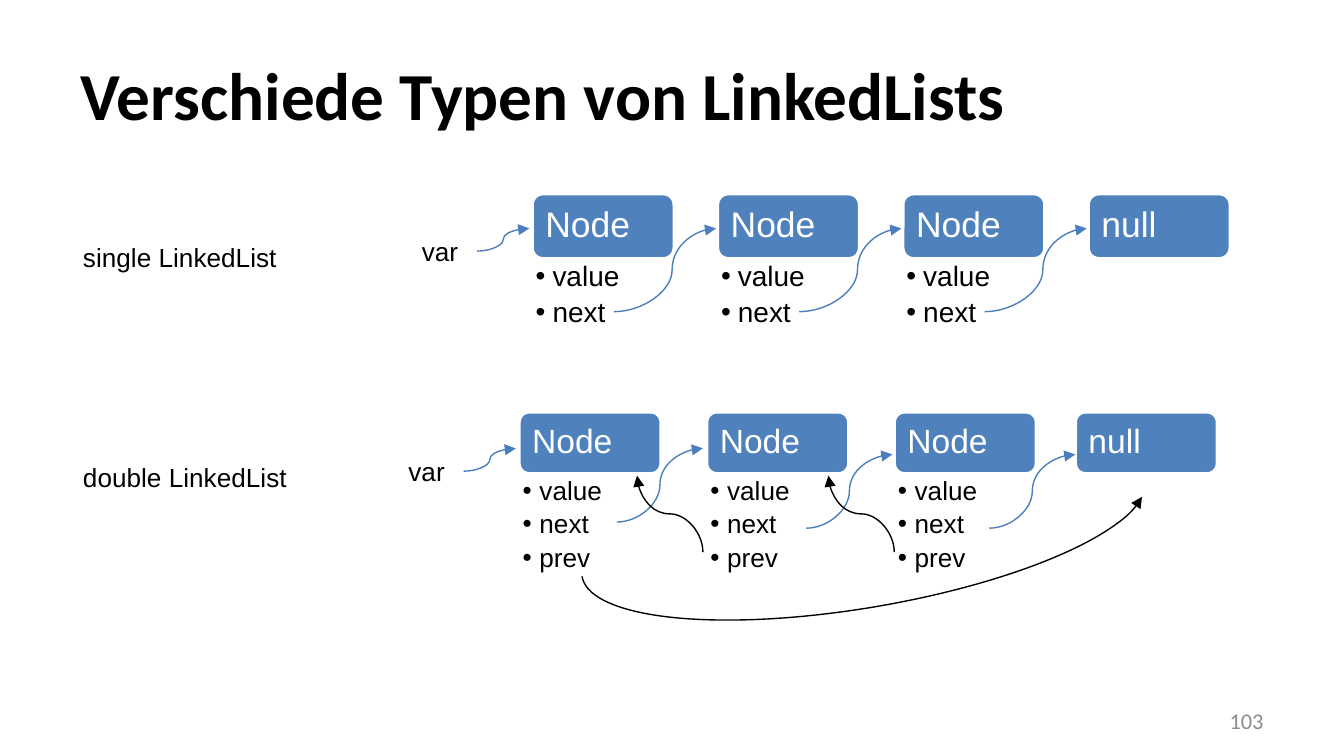
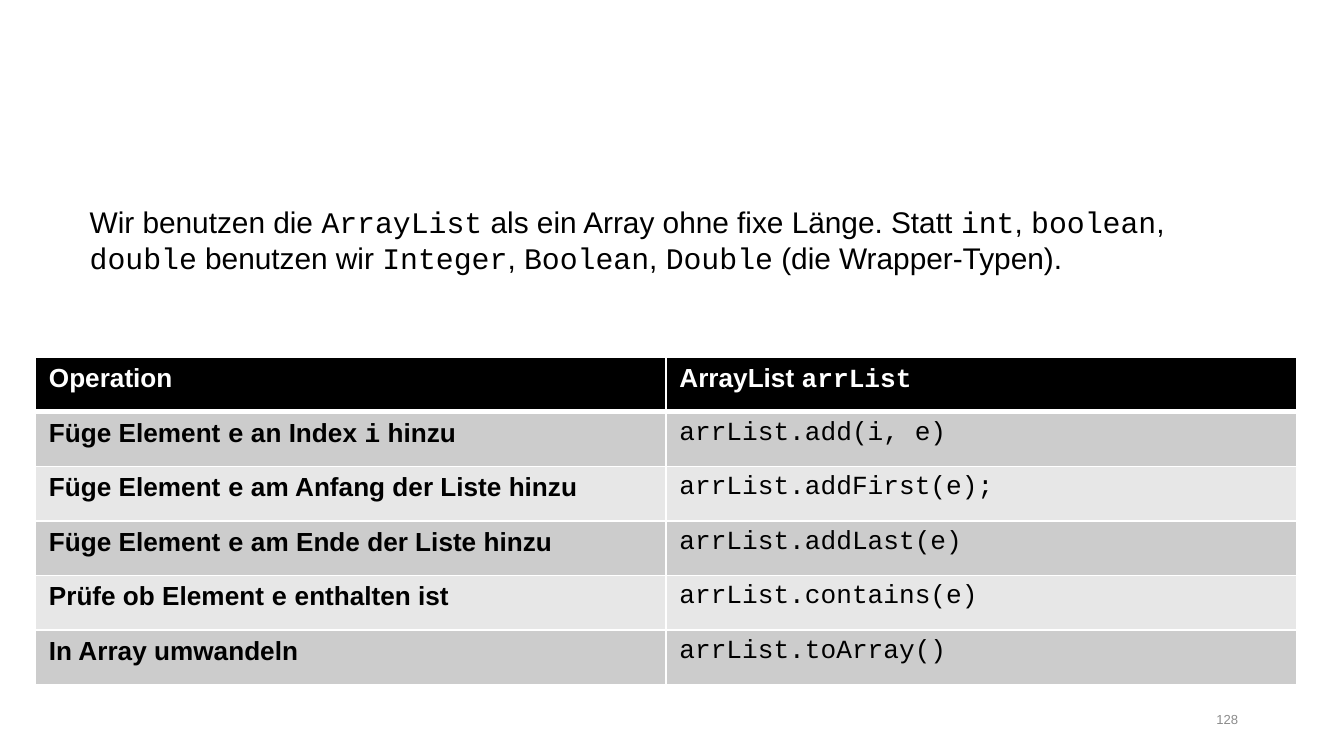
from lxml.etree import SubElement
from pptx import Presentation
from pptx.dml.color import RGBColor
from pptx.enum.shapes import MSO_CONNECTOR, MSO_SHAPE
from pptx.enum.text import MSO_ANCHOR, MSO_AUTO_SIZE, PP_ALIGN
from pptx.oxml.ns import qn
from pptx.util import Pt

COLORS = {
    "black": "000000", "white": "FFFFFF", "node": "4F81BD", "link": "4B7EBC",
    "calibri_number": "8B8B8B", "arial_number": "8C8C8C",
    "dark_band": "CCCCCC", "light_band": "E7E7E7",
}
TEXT_FONT, TITLE_FONT, CODE_FONT = "Arial", "Calibri", "Courier New"
TITLE_ONLY, BLANK = 5, 6


def color(name):
    return RGBColor.from_string(COLORS[name])


def write(paragraph, text, size=14, font=TEXT_FONT, ink="black", bold=False,
          align=PP_ALIGN.LEFT, spacing=None, after=0):
    """Write text into a paragraph; parts between backticks are set as code."""
    paragraph.alignment = align
    paragraph.space_before, paragraph.space_after = Pt(0), Pt(after)
    if spacing:
        paragraph.line_spacing = spacing
    for index, part in enumerate(text.split("`")):
        if part:
            run = paragraph.add_run()
            run.text = part
            run.font.name = CODE_FONT if index % 2 else font
            run.font.size, run.font.bold = Pt(size), bold
            run.font.color.rgb = color(ink)


class Deck:
    """Holds the presentation, its style and the current slide."""

    def __init__(self):
        self.presentation = Presentation()
        self.presentation.slide_width = Pt(720)
        self.presentation.slide_height = Pt(405)
        self.slide = None

    def new_slide(self, layout):
        layouts = self.presentation.slide_layouts
        self.slide = self.presentation.slides.add_slide(layouts[layout])

    def title(self, text):
        title = self.slide.shapes.title
        title.left, title.top, title.width, title.height = Pt(36), Pt(16.5), Pt(648), Pt(67.5)
        title.text_frame.auto_size = MSO_AUTO_SIZE.NONE
        title.text_frame.vertical_anchor = MSO_ANCHOR.MIDDLE
        write(title.text_frame.paragraphs[0], text, 36, TITLE_FONT, bold=True)

    def text_box(self, left, top, width, height, text, anchor=MSO_ANCHOR.TOP, **style):
        box = self.slide.shapes.add_textbox(Pt(left), Pt(top), Pt(width), Pt(height))
        box.text_frame.word_wrap = True
        box.text_frame.vertical_anchor = anchor
        write(box.text_frame.paragraphs[0], text, **style)

    def slide_number(self, number, left, width, **style):
        self.text_box(left, 375.3, width, 21.5, number, MSO_ANCHOR.MIDDLE,
                      align=PP_ALIGN.RIGHT, **style)

    def node(self, left, top, height, text, size):
        node = self.slide.shapes.add_shape(
            MSO_SHAPE.ROUNDED_RECTANGLE, Pt(left), Pt(top), Pt(76.3), Pt(height))
        node.shadow.inherit = False
        node.fill.solid()
        node.fill.fore_color.rgb = color("node")
        node.line.color.rgb, node.line.width = color("white"), Pt(2)
        frame = node.text_frame
        frame.margin_left = frame.margin_right = Pt(5.5)
        frame.margin_top = frame.margin_bottom = Pt(0)
        frame.vertical_anchor = MSO_ANCHOR.MIDDLE
        write(frame.paragraphs[0], text, size, ink="white", spacing=0.9)

    def bullets(self, left, top, height, items, size):
        box = self.slide.shapes.add_textbox(Pt(left), Pt(top), Pt(76.3), Pt(height))
        frame = box.text_frame
        frame.word_wrap = True
        frame.margin_left = frame.margin_top = frame.margin_bottom = Pt(2)
        frame.margin_right = Pt(10)
        for index, item in enumerate(items):
            paragraph = frame.add_paragraph() if index else frame.paragraphs[0]
            write(paragraph, item, size, spacing=0.9, after=size / 5)
            properties = paragraph._p.get_or_add_pPr()
            properties.set("marL", str(Pt(9)))
            properties.set("indent", str(Pt(-9)))
            SubElement(properties, qn("a:buFont"), typeface=TEXT_FONT)
            SubElement(properties, qn("a:buChar"), char="•")

    def outline(self, shape, ink, arrow_end):
        shape.line.color.rgb, shape.line.width = color(ink), Pt(0.75)
        SubElement(shape.line._get_or_add_ln(), qn(f"a:{arrow_end}"), type="triangle")

    def curve(self, left, top, across, up, ink="link", bend=0.5, turn=0):
        """Draw a curved arrow from (left, top), rising to the right before any turn."""
        curve = self.slide.shapes.add_connector(
            MSO_CONNECTOR.CURVE, Pt(left), Pt(top), Pt(left + across), Pt(top - up))
        self.outline(curve, ink, "tailEnd")
        properties = curve._element.spPr
        SubElement(properties, qn("a:effectLst"))
        properties.find(qn("a:xfrm")).set("rot", str(turn * 60000))
        guides = properties.find(qn("a:prstGeom")).find(qn("a:avLst"))
        SubElement(guides, qn("a:gd"), name="adj1", fmla=f"val {round(bend * 100000)}")

    def arc(self, left, top, width, height, start, rotation):
        """Draw an arc from the start angle, in degrees, clockwise to zero."""
        arc = self.slide.shapes.add_shape(
            MSO_SHAPE.ARC, Pt(left), Pt(top), Pt(width), Pt(height))
        arc.shadow.inherit = False
        arc.fill.background()
        arc.rotation = rotation
        arc.adjustments[0], arc.adjustments[1] = start * 0.6, 0
        self.outline(arc, "black", "headEnd")

    def table(self, left, top, column_width, row_height, rows):
        table = self.slide.shapes.add_table(
            len(rows), len(rows[0]), Pt(left), Pt(top),
            Pt(column_width * len(rows[0])), Pt(row_height * len(rows))).table
        table.horz_banding = False
        for column in table.columns:
            column.width = Pt(column_width)
        for row_index, texts in enumerate(rows):
            table.rows[row_index].height = Pt(row_height)
            header = row_index == 0
            fill = "black" if header else ("light_band", "dark_band")[row_index % 2]
            for column_index, text in enumerate(texts):
                cell = table.cell(row_index, column_index)
                cell.fill.solid()
                cell.fill.fore_color.rgb = color(fill)
                write(cell.text_frame.paragraphs[0], text,
                      ink="white" if header else "black",
                      bold=header or column_index == 0)
                self.borders(cell, top=3 if row_index == 1 else 1,
                             bottom=3 if header else 1)

    def borders(self, cell, top, bottom):
        properties = cell._tc.get_or_add_tcPr()
        for index, (side, width) in enumerate(zip("LRTB", (1, 1, top, bottom))):
            line = SubElement(properties, qn(f"a:ln{side}"), w=str(Pt(width)))
            fill = SubElement(line, qn("a:solidFill"))
            SubElement(fill, qn("a:srgbClr"), val=COLORS["white"])
            properties.insert(index, line)

    def linked_list(self, name, name_top, var_left, var_top, lefts, top, height,
                    size, fields, bullet_size, fields_height):
        """Draw one list: its name, the variable, the nodes with fields, and null."""
        self.text_box(37.4, name_top, 124, 24.2, name)
        self.text_box(var_left, var_top, 36.7, 24.2, "var")
        self.curve(var_left + 36.7, var_top + 12.2, 28, 12.2)
        for left in lefts[:-1]:
            self.node(left, top, height, "Node", size)
            self.bullets(left, top + height, fields_height, fields, bullet_size)
        self.node(lefts[-1], top, height, "null", size)


def build_list_types(deck):
    deck.new_slide(TITLE_ONLY)
    deck.title("Verschiede Typen von LinkedLists")
    deck.slide_number("103", 516, 168, size=12, font=TITLE_FONT, ink="calibri_number")

    # Single list: equal steps, each next points to the following node
    single_lefts = [285 + 99.3 * index for index in range(4)]
    deck.linked_list("single LinkedList", 126, 218.9, 122.4, single_lefts, 103.7,
                     35, 19, ["value", "next"], 15, 39)
    for left in single_lefts[:-1]:
        deck.curve(left + 43.9, 167, 54.7, 44.6, bend=0.57)

    # Double list: next in blue, prev in black
    double_lefts = [278, 378.5, 479, 576]
    deck.linked_list("double LinkedList", 243.4, 211.7, 240.3, double_lefts, 220.6,
                     33.3, 18, ["value", "next", "prev"], 14, 54)
    for left, top in ((330.5, 279.7), (432, 283), (530, 283)):
        deck.curve(left, top, 46.1, 39.5)
    for left in (338.4, 440.9):
        deck.curve(left, 293, 41, 35.3, ink="black", turn=270)
    deck.arc(309.6, 240.5, 306, 85, start=183.25, rotation=170.3)


def build_array_list(deck):
    deck.new_slide(BLANK)
    deck.slide_number("128", 508.3, 162, size=7, ink="arial_number", spacing=0.9)
    deck.text_box(
        41, 105.8, 638.6, 46,
        "Wir benutzen die `ArrayList` als ein Array ohne fixe Länge. Statt `int`, "
        "`boolean`, `double` benutzen wir `Integer`, `Boolean`, `Double` "
        "(die Wrapper-Typen).", size=16)
    deck.table(19, 191.5, 337.8, 29.2, [
        ("Operation", "ArrayList `arrList`"),
        ("Füge Element `e` an Index `i` hinzu", "`arrList.add(i, e)`"),
        ("Füge Element `e` am Anfang der Liste hinzu", "`arrList.addFirst(e);`"),
        ("Füge Element `e` am Ende der Liste hinzu", "`arrList.addLast(e)`"),
        ("Prüfe ob Element `e` enthalten ist", "`arrList.contains(e)`"),
        ("In Array umwandeln", "`arrList.toArray()`"),
    ])


def main():
    deck = Deck()
    build_list_types(deck)
    build_array_list(deck)
    deck.presentation.save("out.pptx")


if __name__ == "__main__":
    main()
